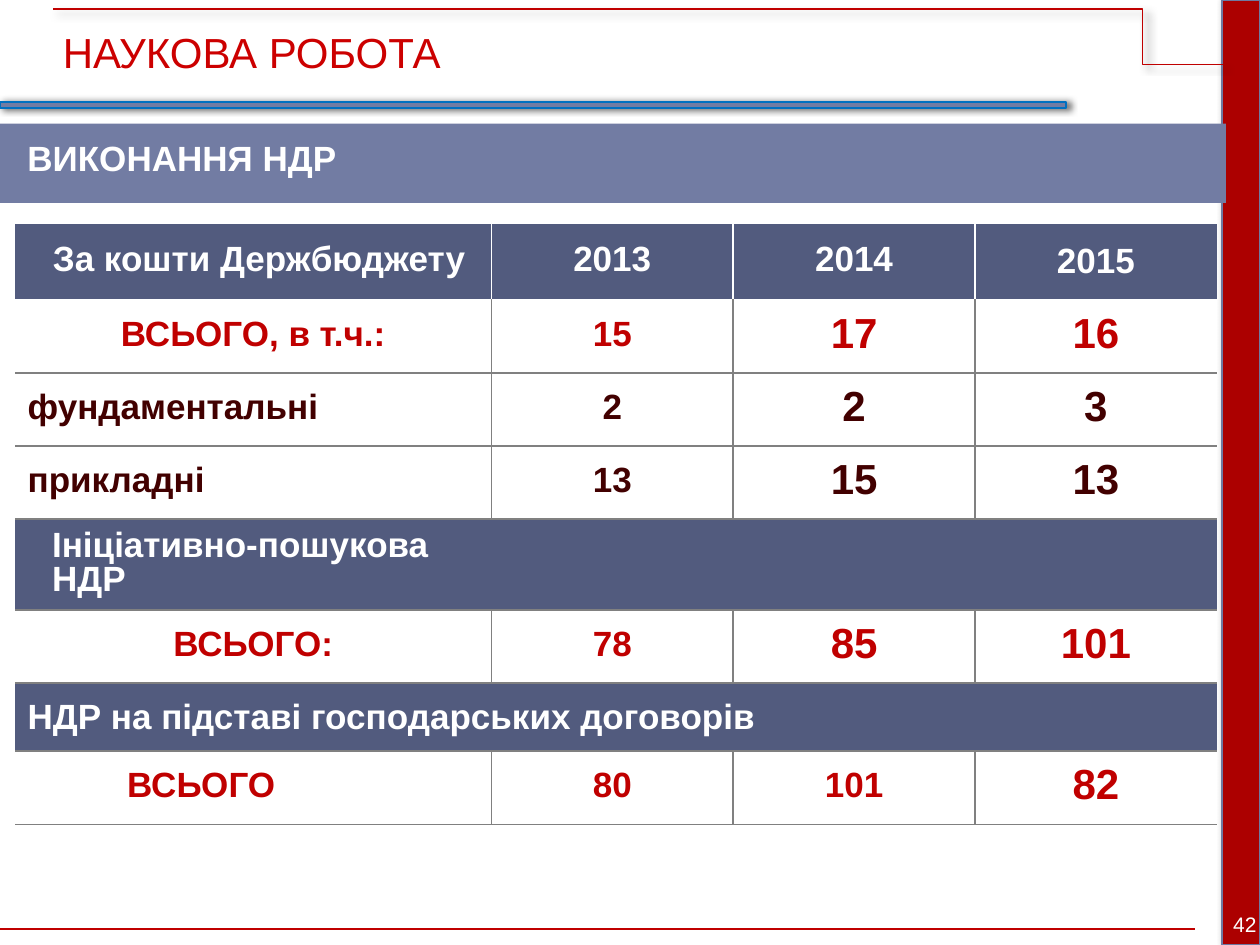
from lxml import etree
from pptx import Presentation
from pptx.dml.color import RGBColor
from pptx.enum import shapes, text
from pptx.oxml import ns
from pptx.util import Pt

color = RGBColor.from_string
A = ns.nsdecls("a")
WHITE, RED, DARK, NAVY, GREY = "FFFFFF", "C00000", "420000", "525B7E", "808080"
LEFT, CENTER, JUSTIFY = text.PP_ALIGN.LEFT, text.PP_ALIGN.CENTER, text.PP_ALIGN.JUSTIFY


def add_run(paragraph, words, size, hue, bold=False):
    run = paragraph.add_run()
    run.text = words
    run.font.name = "Arial"
    run.font.size = Pt(size)
    run.font.bold = bold
    run.font.color.rgb = color(hue)
    return run


def set_shadow(shape, alpha=0, distance=2, angle=0):
    """Give the shape a soft black shadow, or none when alpha is 0."""
    shadow = ""
    if alpha:
        shadow = (f'<a:outerShdw blurRad="{Pt(4)}" dist="{Pt(distance)}" dir="{angle * 60000}" '
                  f'algn="l" rotWithShape="0"><a:srgbClr val="000000">'
                  f'<a:alpha val="{alpha * 1000}"/></a:srgbClr></a:outerShdw>')
    shape._element.spPr.append(etree.fromstring(f"<a:effectLst {A}>{shadow}</a:effectLst>"))


deck = Presentation()
deck.slide_width, deck.slide_height = Pt(720), Pt(540)
slide = deck.slides.add_slide(deck.slide_layouts[6])
parts = slide.shapes

# Side band, rule under the title, section band
for left, top, width, height, fill, edge in [
    (698.4, 0, 21.6, 540, "AC0000", "6E79A1"),
    (0, 58.3, 609.1, 3.6, "727CA3", "0070C0"),
    (0, 70.6, 700.6, 45.4, "727CA3", None),
]:
    band = parts.add_shape(shapes.MSO_SHAPE.RECTANGLE, Pt(left), Pt(top), Pt(width), Pt(height))
    band.fill.solid()
    band.fill.fore_color.rgb = color(fill)
    if edge:
        band.line.color.rgb = color(edge)
        band.line.width = Pt(1)
        set_shadow(band, alpha=60)
    else:
        band.line.fill.background()
        band.shadow.inherit = False

# Stepped line above the title
step = parts.add_connector(shapes.MSO_CONNECTOR.ELBOW, Pt(699.1), Pt(36.9), Pt(30.2), Pt(5))
step.line.color.rgb = color(RED)
step.line.width = Pt(1)
bend = step._element.spPr.prstGeom.get_or_add_avLst()
etree.SubElement(bend, ns.qn("a:gd"), name="adj1", fmla="val 6900")
set_shadow(step, alpha=40, distance=3, angle=45)

# Footer line
footer = parts.add_connector(shapes.MSO_CONNECTOR.STRAIGHT, Pt(0), Pt(530.8), Pt(683), Pt(530.8))
footer.line.color.rgb = color(RED)
footer.line.width = Pt(1)
set_shadow(footer)

# Page number
page = parts.add_shape(shapes.MSO_SHAPE.DOUBLE_BRACKET, Pt(689.8), Pt(512.6), Pt(43.2), Pt(31))
page.adjustments[0] = 0.179
page.fill.background()
page.line.fill.background()
page.shadow.inherit = False
frame = page.text_frame
frame.margin_left = frame.margin_right = frame.margin_top = frame.margin_bottom = 0
frame.vertical_anchor = text.MSO_ANCHOR.MIDDLE
frame.paragraphs[0].alignment = CENTER
add_run(frame.paragraphs[0], "42", 12, WHITE)

# Title and section heading
for words, left, top, width, height, size, hue, bold in [
    ("НАУКОВА РОБОТА", 28.8, 11.5, 645.8, 36, 24, "CC0000", False),
    ("ВИКОНАННЯ НДР", 8.6, 74.2, 607, 31.7, 20, WHITE, True),
]:
    heading = parts.add_textbox(Pt(left), Pt(top), Pt(width), Pt(height)).text_frame
    heading.word_wrap = True
    heading.auto_size = text.MSO_AUTO_SIZE.SHAPE_TO_FIT_TEXT
    add_run(heading.paragraphs[0], words, size, hue, bold)

# Research table: label, alignment, first-line indent, row height, values, value sizes
research = [
    ("За кошти Держбюджету", LEFT, 14.4, 43.9, ("2013", "2014", "2015"), (20, 20, 20)),
    ("ВСЬОГО, в т.ч.:", CENTER, 0, 41.8, ("15", "17", "16"), (20, 24, 24)),
    ("фундаментальні", LEFT, 0, 41.8, ("2", "2", "3"), (20, 24, 24)),
    ("прикладні", LEFT, 0, 41.8, ("13", "15", "13"), (20, 24, 24)),
    ("Ініціативно-пошукова\nНДР", JUSTIFY, 14, 52, (), ()),
    ("ВСЬОГО:", CENTER, 0, 41.8, ("78", "85", "101"), (20, 24, 24)),
    ("НДР на підставі господарських договорів", LEFT, 0, 38.9, (), ()),
    ("ВСЬОГО", LEFT, 56.9, 41.8, ("80", "101", "82"), (20, 20, 24)),
]
CONTRACTS = 6
table = parts.add_table(len(research), 4, Pt(8.6), Pt(127.4), Pt(686.6), Pt(343.8)).table
for column, width in zip(table.columns, (272.2, 138.2, 138.2, 138.2)):
    column.width = Pt(width)

for r, (label, align, indent, height, values, sizes) in enumerate(research):
    table.rows[r].height = Pt(height)
    section = not values
    if section:
        table.cell(r, 0).merge(table.cell(r, 3))
    banded = section or r == 0
    hue = WHITE if banded else RED if label.startswith("ВСЬОГО") else DARK

    for c in range(4):
        cell = table.cell(r, c)
        cell.vertical_anchor = text.MSO_ANCHOR.MIDDLE

        # Borders: white around the header, grey below, open at both outer sides
        inner = WHITE if r == 0 else GREY
        edges = {
            "lnL": inner if c > 0 and not section else None,
            "lnR": inner if (c < 3 and not section) or (c == 3 and r == CONTRACTS) else None,
            "lnT": WHITE if r < 2 else GREY,
            "lnB": inner,
        }
        for side, hex_edge in edges.items():
            paint = (f'<a:solidFill><a:srgbClr val="{hex_edge}"/></a:solidFill>'
                     if hex_edge else "<a:noFill/>")
            cell._tc.get_or_add_tcPr().append(
                etree.fromstring(f'<a:{side} {A} w="{Pt(1)}">{paint}</a:{side}>'))
        cell.fill.solid()
        cell.fill.fore_color.rgb = color(NAVY if banded else WHITE)

        if c > 0 and section:
            continue
        lines = label.split("\n") if c == 0 else [values[c - 1]]
        for i, line in enumerate(lines):
            paragraph = cell.text_frame.paragraphs[0] if i == 0 else cell.text_frame.add_paragraph()
            paragraph.alignment = align if c == 0 else CENTER
            if r != CONTRACTS and line != "2015":
                paragraph.line_spacing = 0.85
            if c == 0 and indent:
                properties = paragraph._p.get_or_add_pPr()
                properties.set("marL", "0")
                properties.set("indent", str(Pt(indent)))
            add_run(paragraph, line, 20 if c == 0 else sizes[c - 1], hue, True)

deck.save("out.pptx")
